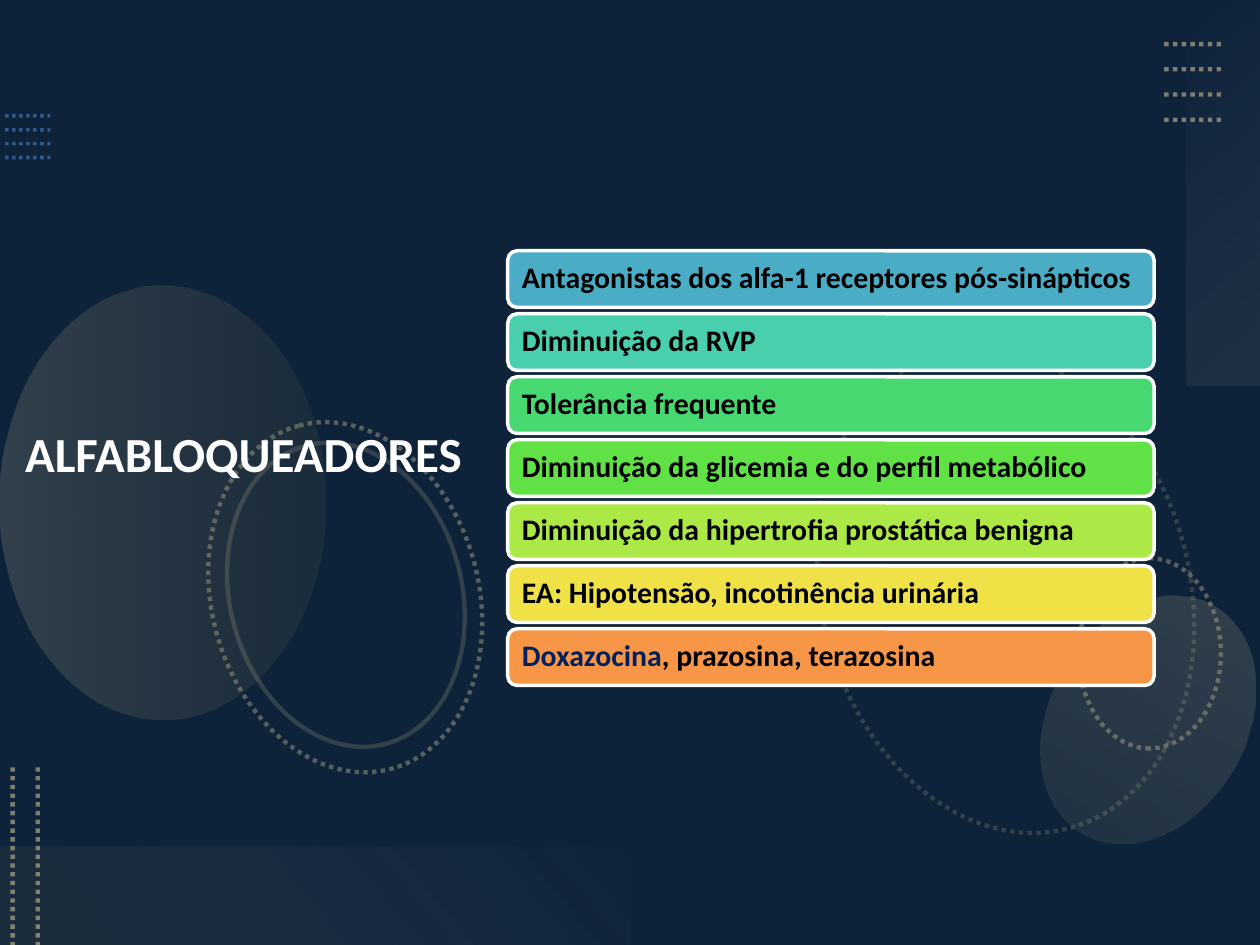
from dataclasses import dataclass

from lxml import etree
from pptx import Presentation
from pptx.dml.color import RGBColor
from pptx.enum import dml, shapes, text
from pptx.oxml import ns
from pptx.util import Inches, Pt

COLORS = {
    "navy": "1F497D", "black": "000000", "white": "FFFFFF", "blue": "558ED5",
    "sand": "C4BD97", "olive": "948A54", "pale": "F8F7F3", "cream": "F5F4ED",
    "ink": "002060",
}
FONT = "Calibri"


@dataclass
class Stop:
    color: str
    opacity: int
    position: float


@dataclass
class Blob:
    """A rotated decoration with a gradient fill."""
    kind: shapes.MSO_SHAPE
    at: tuple
    rotation: int
    angle: int
    stops: tuple


@dataclass
class Ring:
    at: tuple
    rotation: int
    opacity: int
    dotted: bool = True


@dataclass
class Dots:
    """Parallel dotted lines, each moved by step from the one before."""
    start: tuple
    end: tuple
    step: tuple
    count: int
    color: str
    width: float
    opacity: int


@dataclass
class Bar:
    color: str
    spans: tuple


ELLIPSE, RECT = shapes.MSO_SHAPE.OVAL, shapes.MSO_SHAPE.RECTANGLE

RINGS = [
    Ring((6.03, 3.23, 3.9, 2.92), 75, 20),
    Ring((8.37, 4.62, 1.51, 1.13), 270, 40),
    Ring((1.33, 3.68, 2.82, 2.12), 75, 40),
    Ring((1.52, 3.8, 2.45, 1.84), 75, 20, dotted=False),
]
BLOBS = [
    Blob(ELLIPSE, (-0.43, 2.7, 3.44, 2.58), 270, 90,
         (Stop("sand", 20, 0), Stop("olive", 10, 1))),
    Blob(ELLIPSE, (8.33, 4.67, 1.56, 2.08), 210, 90,
         (Stop("sand", 10, 0), Stop("sand", 20, 1))),
    Blob(RECT, (8.18, 1.24, 3.06, 0.58), 270, 140,
         (Stop("pale", 0, 0), Stop("sand", 10, 1))),
    Blob(RECT, (0, 6.72, 5, 0.78), 180, 140,
         (Stop("olive", 10, 0.1), Stop("cream", 0, 1))),
]
DOTS = [
    Dots((0.04, 0.92), (0.4, 0.92), (0, 0.11), 4, "blue", 2, 50),
    Dots((9.24, 0.35), (9.69, 0.35), (0, 0.2), 4, "sand", 2.5, 60),
    Dots((0.1, 6.09), (0.1, 7.5), (0.2, 0), 2, "sand", 2.5, 60),
]
BARS = [
    Bar("4BACC6", (("Antagonistas dos alfa-1 receptores pós-sinápticos", "black"),)),
    Bar("49CFAE", (("Diminuição da RVP", "black"),)),
    Bar("47D872", (("Tolerância frequente", "black"),)),
    Bar("60E146", (("Diminuição da glicemia e do perfil metabólico", "black"),)),
    Bar("ACE946", (("Diminuição da hipertrofia prostática benigna", "black"),)),
    Bar("F0E146", (("EA: Hipotensão, incotinência urinária", "black"),)),
    Bar("F79646", (("Doxazocina", "ink"), (", prazosina, terazosina", "black"))),
]
BAR_LEFT, BAR_TOP, BAR_WIDTH, BAR_HEIGHT, BAR_PITCH = 4.03, 1.99, 5.13, 0.45, 0.5


def rgb(name: str) -> RGBColor:
    return RGBColor.from_string(COLORS.get(name, name))


def set_opacity(shape, *percents: int) -> None:
    """Give the shape's colours, in order, their opacities."""
    for color, percent in zip(shape._element.spPr.iter(ns.qn("a:srgbClr")), percents):
        etree.SubElement(color, ns.qn("a:alpha")).set("val", str(percent * 1000))


def add_shape(page, kind, at: tuple, rotation: int = 0):
    shape = page.shapes.add_shape(kind, *map(Inches, at))
    shape.rotation = rotation
    shape.shadow.inherit = False
    return shape


def draw_blob(page, blob: Blob) -> None:
    shape = add_shape(page, blob.kind, blob.at, blob.rotation)
    shape.line.fill.background()
    shape.fill.gradient()
    shape.fill.gradient_angle = 360 - blob.angle
    for target, stop in zip(shape.fill.gradient_stops, blob.stops):
        target.color.rgb = rgb(stop.color)
        target.position = stop.position
    set_opacity(shape, *(stop.opacity for stop in blob.stops))


def draw_ring(page, ring: Ring) -> None:
    shape = add_shape(page, ELLIPSE, ring.at, ring.rotation)
    shape.fill.background()
    shape.line.color.rgb = rgb("sand")
    shape.line.width = Pt(2.5)
    if ring.dotted:
        shape.line.dash_style = dml.MSO_LINE.ROUND_DOT
    set_opacity(shape, ring.opacity)


def draw_dots(page, dots: Dots) -> None:
    for index in range(dots.count):
        ends = [Inches(point[axis] + index * dots.step[axis])
                for point in (dots.start, dots.end) for axis in (0, 1)]
        line = page.shapes.add_connector(shapes.MSO_CONNECTOR.STRAIGHT, *ends)
        line.line.color.rgb = rgb(dots.color)
        line.line.width = Pt(dots.width)
        line.line.dash_style = dml.MSO_LINE.ROUND_DOT
        set_opacity(line, dots.opacity)
        etree.SubElement(line._element.spPr, ns.qn("a:effectLst"))


def write(box, spans: tuple, *, size: float, margin: float, space_after: float) -> None:
    frame = box.text_frame
    frame.word_wrap = True
    frame.auto_size = text.MSO_AUTO_SIZE.NONE
    frame.vertical_anchor = text.MSO_ANCHOR.MIDDLE
    frame.margin_left = frame.margin_right = Inches(margin)
    para = frame.paragraphs[0]
    para.alignment = text.PP_ALIGN.LEFT
    para.line_spacing = 0.9
    para.space_before = Pt(0)
    para.space_after = Pt(space_after)
    for words, color in spans:
        span = para.add_run()
        span.text = words
        span.font.name = FONT
        span.font.size = Pt(size)
        span.font.bold = True
        span.font.color.rgb = rgb(color)


def draw_bar(page, index: int, bar: Bar) -> None:
    at = (BAR_LEFT, BAR_TOP + index * BAR_PITCH, BAR_WIDTH, BAR_HEIGHT)
    shape = add_shape(page, shapes.MSO_SHAPE.ROUNDED_RECTANGLE, at)
    shape.fill.solid()
    shape.fill.fore_color.rgb = rgb(bar.color)
    shape.line.color.rgb = rgb("white")
    shape.line.width = Pt(2)
    write(shape, bar.spans, size=17, margin=0.09, space_after=0)


def main() -> None:
    deck = Presentation()
    deck.slide_width, deck.slide_height = Inches(10), Inches(7.5)
    page = deck.slides.add_slide(deck.slide_layouts[5])

    # Background and its dark veil
    page.background.fill.solid()
    page.background.fill.fore_color.rgb = rgb("navy")
    veil = add_shape(page, RECT, (0, 0, 10, 7.5))
    veil.fill.solid()
    veil.fill.fore_color.rgb = rgb("black")
    veil.line.fill.background()
    set_opacity(veil, 53)

    # Decorations
    for ring in RINGS:
        draw_ring(page, ring)
    for blob in BLOBS:
        draw_blob(page, blob)
    for dots in DOTS:
        draw_dots(page, dots)

    # Title, raised above the decorations
    title = page.shapes.title
    title.left, title.top, title.width, title.height = map(Inches, (0.1, 0.54, 3.86, 6.17))
    write(title, (("ALFABLOQUEADORES", "white"),), size=28, margin=0.1, space_after=6)
    page.shapes._spTree.append(title._element)

    # List of bars
    for index, bar in enumerate(BARS):
        draw_bar(page, index, bar)

    deck.save("out.pptx")


if __name__ == "__main__":
    main()
